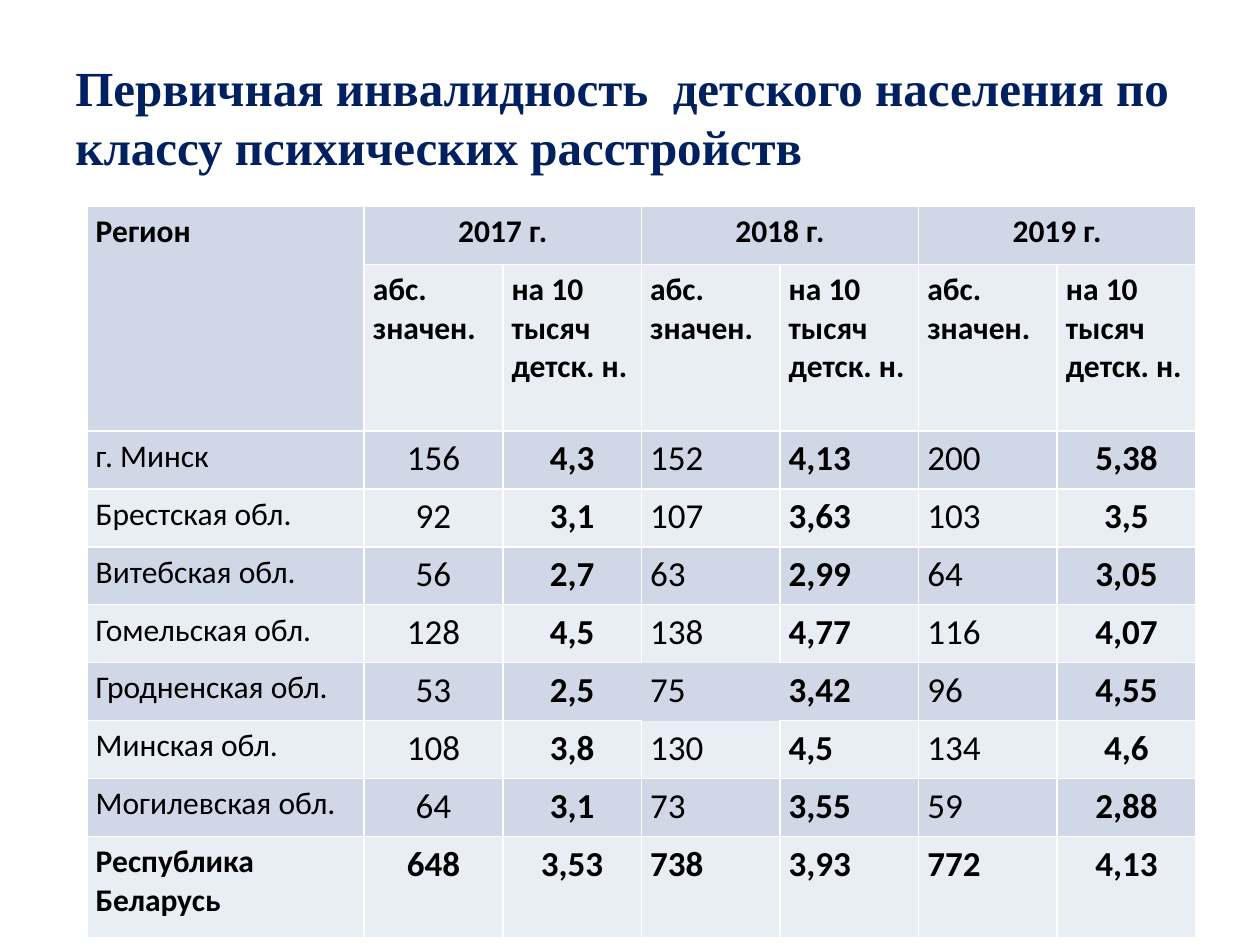
from dataclasses import dataclass
from lxml.etree import SubElement as Sub
from pptx import Presentation as Deck
from pptx.dml.color import RGBColor as Color
from pptx.enum.text import MSO_ANCHOR as Anchor, PP_ALIGN as Align
from pptx.oxml.ns import qn
from pptx.util import Inches, Pt


@dataclass(frozen=True)
class Theme:
    navy: str = "002060"
    ink: str = "000000"
    line: str = "FFFFFF"
    bands: tuple = ("D0D8E8", "E9EDF4")
    serif: str = "Times New Roman"
    sans: str = "Calibri"
    title: int = 28
    label: int = 18
    value: int = 20


TITLE = "Первичная инвалидность  детского населения по классу психических расстройств"
RATE = "на 10 тысяч детск. н."
SPLIT = "абс.\nзначен."
ROWS = [
    ["Регион", "2017 г.", "", "2018 г.", "", "2019 г.", ""],
    ["", SPLIT, RATE, "абс. значен.", RATE, SPLIT, RATE],
    ["г. Минск", "156", "4,3", "152", "4,13", "200", "5,38"],
    ["Брестская обл.", "92", "3,1", "107", "3,63", "103", "3,5"],
    ["Витебская обл.", "56", "2,7", "63", "2,99", "64", "3,05"],
    ["Гомельская обл.", "128", "4,5", "138", "4,77", "116", "4,07"],
    ["Гродненская обл.", "53", "2,5", "75", "3,42", "96", "4,55"],
    ["Минская обл.", "108", "3,8", "130", "4,5", "134", "4,6"],
    ["Могилевская обл.", "64", "3,1", "73", "3,55", "59", "2,88"],
    ["Республика Беларусь", "648", "3,53", "738", "3,93", "772", "4,13"],
]
WIDTHS = [2.2] + [1.1] * 6
HEIGHTS = [0.46, 1.32] + [0.46] * 7 + [0.8]
MERGES = [(0, 0, 1, 0), (0, 1, 0, 2), (0, 3, 0, 4), (0, 5, 0, 6)]
OPEN = (6, 3)
SIDES = {"L": (0, -1), "R": (0, 1), "T": (-1, 0), "B": (1, 0)}


class Page:
    def __init__(self, deck, theme):
        self.theme = theme
        self.slide = deck.slides.add_slide(deck.slide_layouts[6])

    def text(self, frame, words, size, face, tint, bold, align=Align.LEFT):
        for num, line in enumerate(words.split("\n")):
            para = frame.add_paragraph() if num else frame.paragraphs[0]
            para.alignment = align
            run = para.add_run()
            run.text = line
            font = run.font
            font.size, font.name, font.bold = Pt(size), face, bold
            font.color.rgb = Color.from_string(tint)

    def title(self, words, box):
        frame = self.slide.shapes.add_textbox(*map(Inches, box)).text_frame
        frame.word_wrap = True
        frame.vertical_anchor = Anchor.MIDDLE
        look = self.theme
        self.text(frame, words, look.title, look.serif, look.navy, True)

    def edge(self, cell, row, col):
        props = cell._tc.get_or_add_tcPr()
        for side, (down, over) in SIDES.items():
            line = Sub(props, qn("a:ln" + side), w=str(Pt(1)))
            if OPEN in ((row, col), (row + down, col + over)):
                Sub(line, qn("a:noFill"))
            else:
                fill = Sub(line, qn("a:solidFill"))
                Sub(fill, qn("a:srgbClr"), val=self.theme.line)

    def cell(self, cell, words, row, col):
        look = self.theme
        self.edge(cell, row, col)
        cell.fill.solid()
        cell.fill.fore_color.rgb = Color.from_string(look.bands[row % 2])
        cell.margin_left = cell.margin_right = Inches(0.07)
        cell.margin_top = cell.margin_bottom = Inches(0.05)
        if not words:
            return
        head = row < 2
        bold = head or row == len(ROWS) - 1 or (col > 0 and col % 2 == 0)
        size = look.label if head or col == 0 else look.value
        mid = col > 0 if row == 0 else row > 1 and col in (1, 2, 6)
        align = Align.CENTER if mid else Align.LEFT
        self.text(cell.text_frame, words, size, look.sans, look.ink, bold, align)

    def table(self, rows, left, top):
        box = map(Inches, (left, top, sum(WIDTHS), sum(HEIGHTS)))
        grid = self.slide.shapes.add_table(len(rows), len(WIDTHS), *box).table
        grid.first_row = grid.horz_banding = False
        for col, wide in zip(grid.columns, WIDTHS):
            col.width = Inches(wide)
        for row, high in zip(grid.rows, HEIGHTS):
            row.height = Inches(high)
        for row, line in enumerate(rows):
            for col, words in enumerate(line):
                self.cell(grid.cell(row, col), words, row, col)
        for top, left, low, right in MERGES:
            grid.cell(top, left).merge(grid.cell(low, right))


def main():
    deck = Deck()
    deck.slide_width, deck.slide_height = Inches(10), Inches(7.5)
    page = Page(deck, Theme())
    page.title(TITLE, (0.5, 0.3, 9, 1.25))
    page.table(ROWS, 0.69, 1.64)
    deck.save("out.pptx")


if __name__ == "__main__":
    main()
